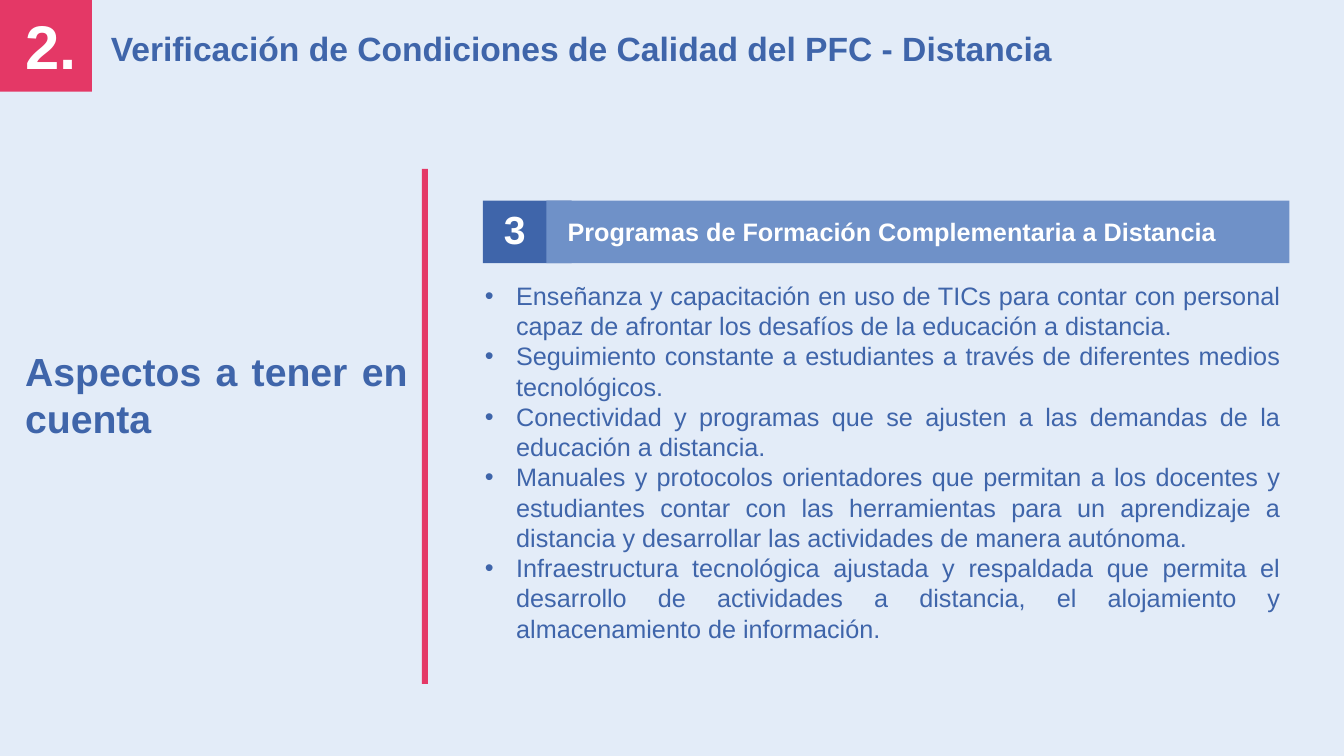
from pptx import Presentation
from pptx.dml.color import RGBColor
from pptx.enum.shapes import MSO_SHAPE as Shape
from pptx.enum.text import MSO_ANCHOR as Anchor, MSO_AUTO_SIZE as AutoSize, PP_ALIGN as Align
from pptx.util import Inches, Pt
from lxml import etree

WIDTH, HEIGHT = Inches(13.33), Inches(7.5)
PALE, BLUE, SOFT_BLUE, PINK, WHITE = "E3ECF8", "3F65AA", "6F91C8", "E43866", "FFFFFF"
HEADER_TOP, HEADER_HEIGHT = 26.53, 8.27
ASPECTS = [
    "Enseñanza y capacitación en uso de TICs para contar con personal capaz de afrontar "
    "los desafíos de la educación a distancia.",
    "Seguimiento constante a estudiantes a través de diferentes medios tecnológicos.",
    "Conectividad y programas que se ajusten a las demandas de la educación a distancia.",
    "Manuales y protocolos orientadores que permitan a los docentes y estudiantes contar con "
    "las herramientas para un aprendizaje a distancia y desarrollar las actividades de manera autónoma.",
    "Infraestructura tecnológica ajustada y respaldada que permita el desarrollo de actividades "
    "a distancia, el alojamiento y almacenamiento de información.",
]


def paint(fill, color):
    fill.solid()
    fill.fore_color.rgb = RGBColor.from_string(color)


def area(x, y, w, h):
    """Turn percentages of the slide's width and height into lengths."""
    return [round(share * side / 100)
            for share, side in zip((x, y, w, h), (WIDTH, HEIGHT) * 2)]


def add_block(s, box, color):
    block = s.shapes.add_shape(Shape.RECTANGLE, *area(*box))
    block.shadow.inherit = False
    paint(block.fill, color)
    block.line.fill.background()


def add_bullet(p, indent=Inches(0.31)):
    pPr = p._p.get_or_add_pPr()
    pPr.set("marL", str(indent))
    pPr.set("indent", str(-indent))
    ns = pPr.nsmap["a"]
    etree.SubElement(pPr, f"{{{ns}}}buFont", typeface="Arial")
    etree.SubElement(pPr, f"{{{ns}}}buChar", char="•")


def write(sp, *texts, size=18, color=BLUE, bold=True, align=Align.LEFT, bullets=False):
    tf = sp.text_frame
    tf.word_wrap = True
    tf.auto_size = AutoSize.NONE
    tf.vertical_anchor = Anchor.TOP
    for i, text in enumerate(texts):
        p = tf.add_paragraph() if i else tf.paragraphs[0]
        p.alignment = align
        p.space_before = Pt(0)
        if bullets:
            add_bullet(p)
        r = p.add_run()
        r.text = text
        r.font.name, r.font.size, r.font.bold = "Arial", Pt(size), bold
        r.font.color.rgb = RGBColor.from_string(color)


def add_label(s, box, text, **style):
    write(s.shapes.add_textbox(*area(*box)), text, **style)


def fill_placeholder(sp, box, *texts, **style):
    sp.left, sp.top, sp.width, sp.height = area(*box)
    write(sp, *texts, **style)


def main():
    prs = Presentation()
    prs.slide_width, prs.slide_height = WIDTH, HEIGHT
    s = prs.slides.add_slide(prs.slide_layouts[1])
    paint(s.background.fill, PALE)
    title, body = s.placeholders

    add_block(s, (0, 0, 6.83, 12.13), PINK)
    add_label(s, (1.13, 0.4, 5.7, 11.2), "2.", size=44, color=WHITE)
    fill_placeholder(title, (7.5, 3.07, 76.45, 6.73),
                     "Verificación de Condiciones de Calidad del PFC - Distancia", size=24)

    add_label(s, (1.13, 45.33, 29.93, 13.87), "Aspectos a tener en cuenta",
              size=28, align=Align.JUSTIFY)
    add_block(s, (31.39, 22.33, 0.45, 68.13), PINK)

    add_block(s, (35.93, HEADER_TOP, 6.6, HEADER_HEIGHT), BLUE)
    add_block(s, (40.66, HEADER_TOP, 55.29, HEADER_HEIGHT), SOFT_BLUE)
    add_label(s, (36.76, HEADER_TOP, 2.78, 7.6), "3", size=28, color=WHITE)
    add_label(s, (41.49, 28, 55.51, 5.33),
              "Programas de Formación Complementaria a Distancia", color=WHITE)
    fill_placeholder(body, (35.33, 36.4, 60.69, 49.87), *ASPECTS,
                     bold=False, align=Align.JUSTIFY, bullets=True)
    prs.save("out.pptx")


if __name__ == "__main__":
    main()
